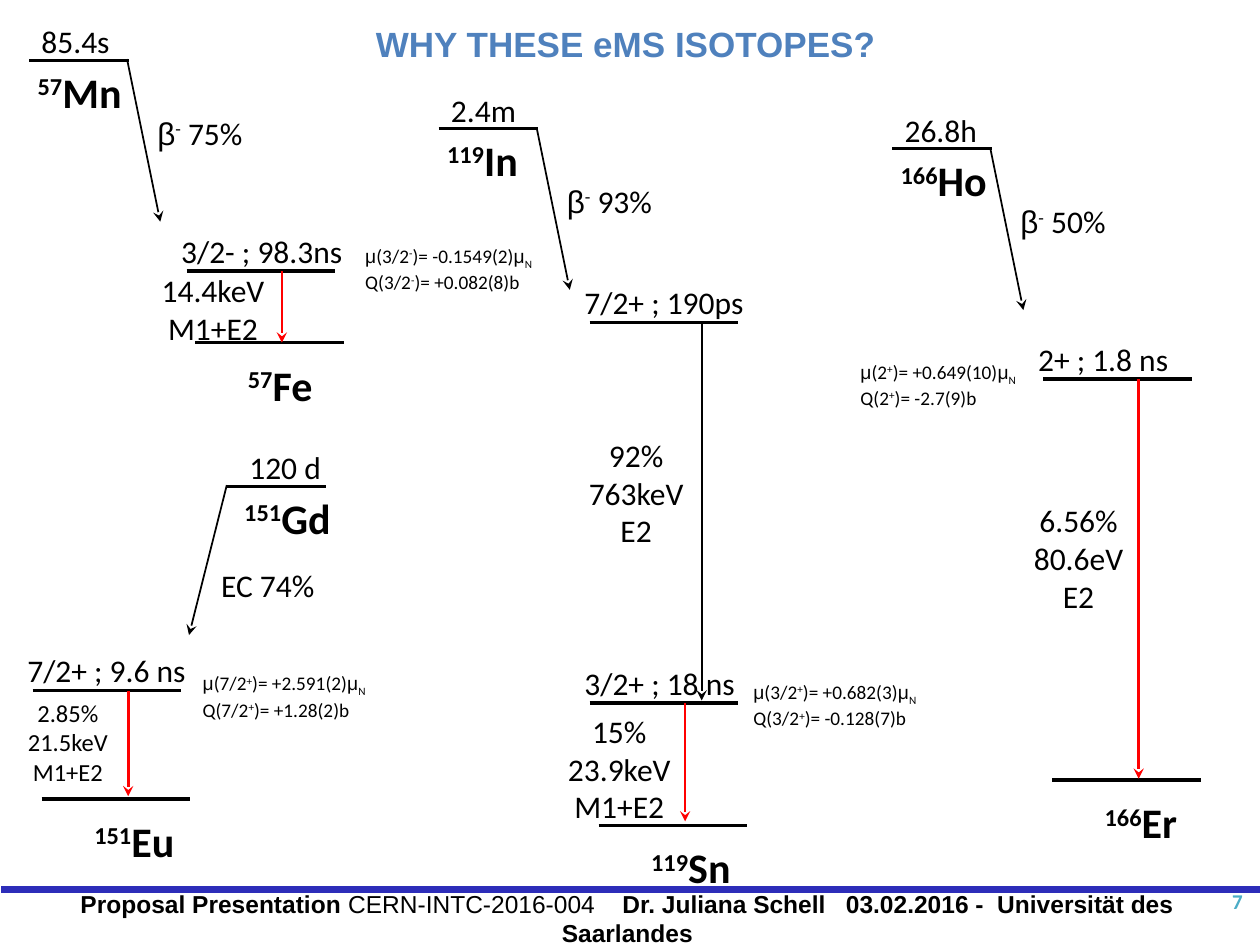
from lxml import etree
from pptx import Presentation
from pptx import util as u
from pptx.dml.color import RGBColor
from pptx.enum import shapes, text
from pptx.oxml.ns import qn

Pt = u.Pt
deck = Presentation()
deck.slide_width, deck.slide_height = Pt(720), Pt(540)
slide = deck.slides.add_slide(deck.slide_layouts[6])
left, mid, right = text.PP_ALIGN.LEFT, text.PP_ALIGN.CENTER, text.PP_ALIGN.RIGHT


def write(x, y, w, h, lines, size=18, bold=False, align=left, wrap=False, font="Calibri", tint="000000"):
    box = slide.shapes.add_textbox(Pt(x), Pt(y), Pt(w), Pt(h))
    frame = box.text_frame
    frame.word_wrap = wrap
    frame.auto_size = text.MSO_AUTO_SIZE.SHAPE_TO_FIT_TEXT
    for i, line in enumerate(lines):
        para = frame.add_paragraph() if i else frame.paragraphs[0]
        para.alignment = align
        for part in line.split("|"):
            run = para.add_run()
            run.text = part.lstrip("^_")
            run.font.size = Pt(size)
            run.font.bold = bold
            run.font.name = "Arial" if part in ("β", "μ") else font
            run.font.color.rgb = RGBColor.from_string(tint)
            base = {"^": "30000", "_": "-25000"}.get(part[0])
            if base:
                run._r.get_or_add_rPr().set("baseline", base)
    return frame


def draw(x1, y1, x2, y2, width=2, tint="000000", arrow=False):
    line = slide.shapes.add_connector(shapes.MSO_CONNECTOR.STRAIGHT, Pt(x1), Pt(y1), Pt(x2), Pt(y2))
    line.line.width = Pt(width)
    line.line.color.rgb = RGBColor.from_string(tint)
    if arrow:
        etree.SubElement(line.line._get_or_add_ln(), qn("a:tailEnd"), type="stealth")
    etree.SubElement(line._element.spPr, qn("a:effectLst"))


draw(0.7, 508.3, 720.7, 508.3, 4.5, "2D2DB9")
foot = write(19.4, 512.6, 678.2, 24.5,
             ["Proposal Presentation |CERN-INTC-2016-004|    Dr. Juliana Schell   03.02.2016 -  Universität des Saarlandes"],
             14, True, mid, True, "Arial")
foot.auto_size = text.MSO_AUTO_SIZE.NONE
foot.vertical_anchor = text.MSO_ANCHOR.MIDDLE
foot.paragraphs[0].runs[1].font.bold = False
write(54, 9.4, 607, 31.7, ["WHY THESE eMS ISOTOPES?"], 20, True, mid, True, "Arial", "4F81BD")

parents = [
    (16.6, 34.5, "85.4s", 54, "^57|Mn", 65, "75%"),
    (250.6, 73.4, "2.4m", 52, "^119|In", 58.3, "93%"),
    (509.8, 85, "26.8h", 56.2, "^166|Ho", 67.7, "50%"),
]
for x, y, life, wide, name, span, share in parents:
    draw(x, y, x + 57, y)
    draw(x + 56, y - 0.7, x + 75, y + 92.2, 1, arrow=True)
    write(x, y - 25.2, wide, 29, [life])
    write(x - 2.2, y, span, 36, [name], 24, True)
    write(x + 66.2, y + 27, 64, 29, ["β|^-| " + share])

draw(129.6, 277.9, 186.5, 277.9)
draw(129.6, 277.2, 108, 362.9, 1, arrow=True)
write(135.4, 252.7, 56.2, 29, ["120 d"])
write(132.5, 277.9, 67.7, 36, ["^151|Gd"], 24, True)
write(115.2, 319.7, 72.7, 29, [" EC 74%"])

levels = [
    (106.6, 154.8, "3/2- ; 98.3ns", 108),
    (18.7, 394.6, "7/2+ ; 9.6 ns", 105.8),
    (337, 401.8, "3/2+ ; 18 ns", 101.5),
    (337, 184.3, "7/2+ ; 190ps", 106.6),
    (596.2, 216.7, "2+ ; 1.8 ns", 90),
]
for x, y, state, wide in levels:
    draw(x, y, x + 85, y)
    write(x - 10.1, y - 25.9, wide, 29, [state])

grounds = [
    (111.6, 195.8, 154.8, 195.8, "^57|Fe", 54),
    (23.8, 456.5, 394.6, 455, "^151|Eu", 64),
    (342, 471.6, 401.8, 469.4, "^119|Sn", 63.4),
    (601.2, 445.7, 216.7, 445, "^166|Er", 59.8),
]
for x, y, top, end, name, wide in grounds:
    draw(x, y, x + 85, y)
    draw(x + 49.5, top, x + 49.5, end, 1.5, "FF0000", True)
    write(x + 23, y + 6, wide, 36, [name], 24, True)
draw(401, 184.3, 401, 400.3, 1, arrow=True)

decays = [
    (85, 151.2, 73.4, 51.1, ["14.4keV", "M1+E2"], 18),
    (8.6, 395.3, 60.5, 58.3, ["2.85%", "21.5keV", "M1+E2"], 14),
    (316.8, 403.2, 74.2, 72.7, ["15%", "23.9keV", "M1+E2"], 18),
    (329, 245.5, 69.1, 72.7, ["92%", "763keV", "E2"], 18),
    (583.2, 283, 66.2, 72.7, ["6.56%", "80.6eV", "E2"], 18),
]
for x, y, wide, high, lines, size in decays:
    write(x, y, wide, high, lines, size, align=mid)

moments = [
    (201.6, 136.1, "3/2|^-", "-0.1549(2)", "+0.082(8)b"),
    (108.7, 380.2, "7/2|^+", "+2.591(2)", "+1.28(2)b"),
    (423.4, 385.2, "3/2|^+", "+0.682(3)", "-0.128(7)b"),
    (484.6, 202.3, "2|^+", "+0.649(10)", "-2.7(9)b"),
]
for x, y, spin, dip, quad in moments:
    write(x, y, 116.6, 33.8, [f"μ|({spin}|)= {dip}|μ|_N", f"Q({spin}|)= {quad}"], 11, wrap=True)

page = write(549.4, 500.4, 167.8, 28.8, ["7"], 12, True, right, True, tint="4BACC6")
page.auto_size = text.MSO_AUTO_SIZE.NONE
page.vertical_anchor = text.MSO_ANCHOR.MIDDLE

deck.save("out.pptx")
